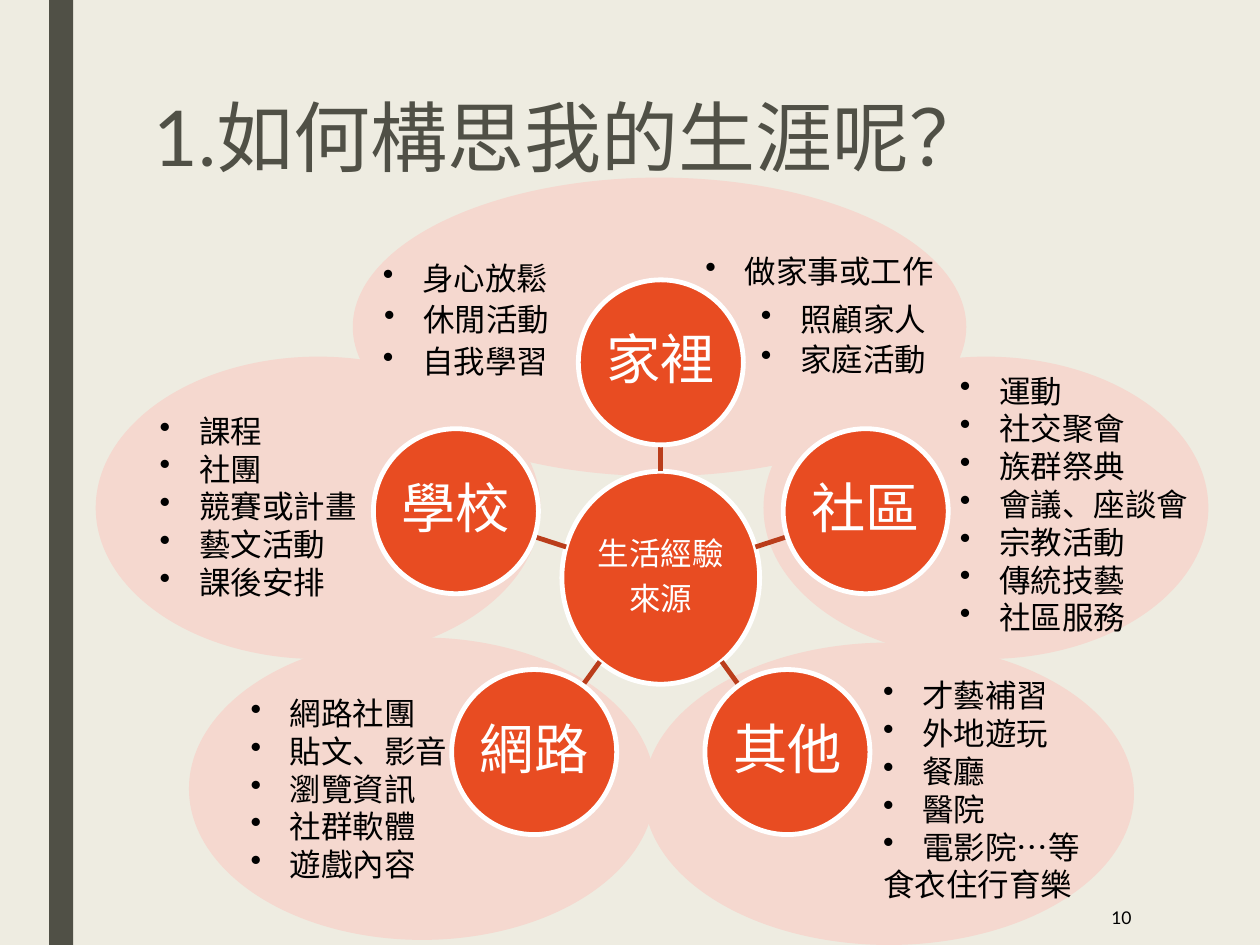
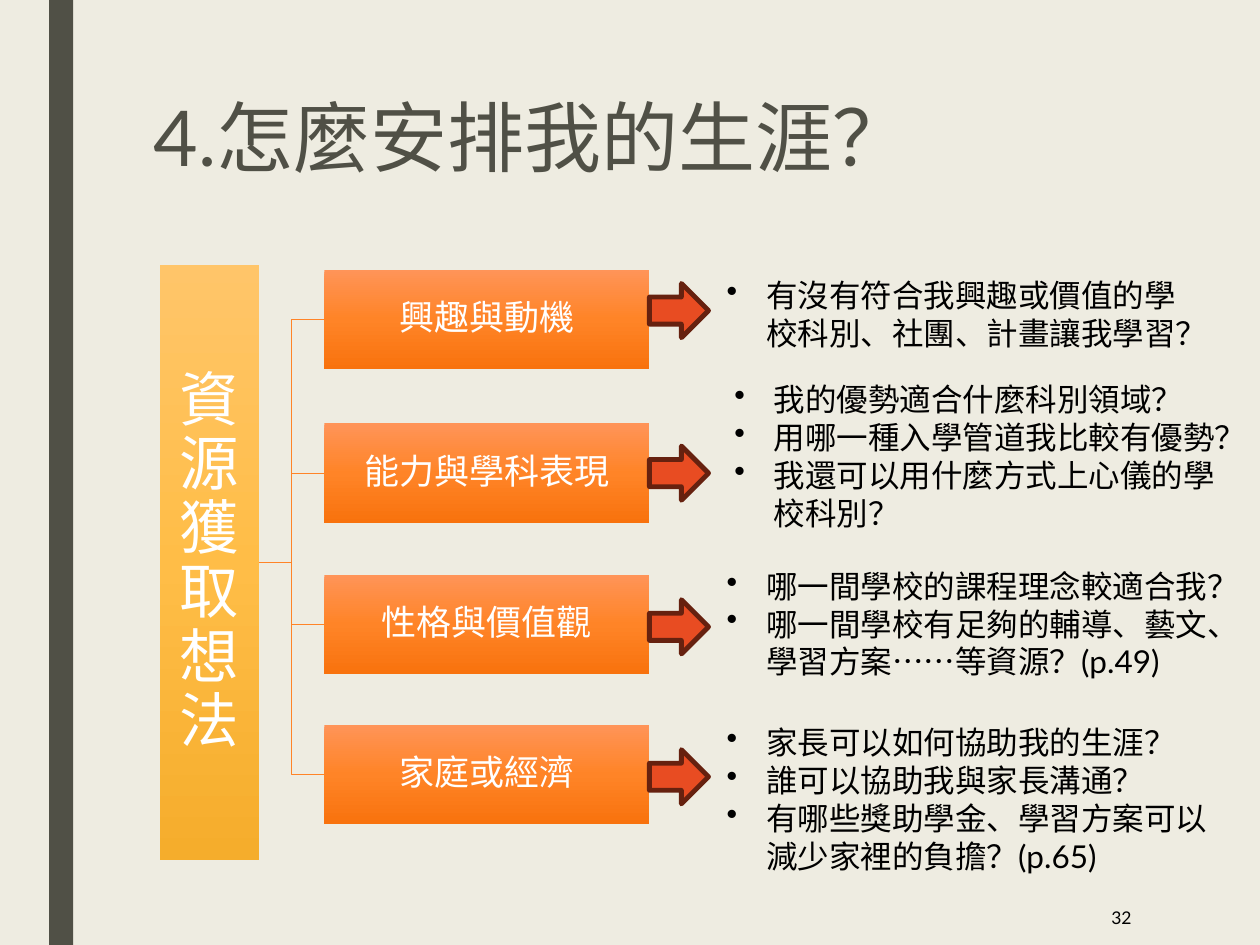
from math import cos, hypot, radians, sin

from lxml import etree
from pptx import Presentation
from pptx.dml.color import RGBColor
from pptx.enum.shapes import MSO_CONNECTOR, MSO_SHAPE
from pptx.enum.text import MSO_ANCHOR, MSO_AUTO_SIZE, PP_ALIGN
from pptx.oxml.ns import qn
from pptx.util import Pt

RECT, OVAL, ARROW = MSO_SHAPE.RECTANGLE, MSO_SHAPE.OVAL, MSO_SHAPE.RIGHT_ARROW
STRAIGHT, ELBOW = MSO_CONNECTOR.STRAIGHT, MSO_CONNECTOR.ELBOW
TOP, MIDDLE = MSO_ANCHOR.TOP, MSO_ANCHOR.MIDDLE
LEFT, CENTER, RIGHT = PP_ALIGN.LEFT, PP_ALIGN.CENTER, PP_ALIGN.RIGHT
NO_FIT = MSO_AUTO_SIZE.NONE

FONT = "Lato"
PAPER, OLIVE, WHITE, BLACK = "EEECE1", "505046", "FFFFFF", "000000"
PINK, RED, SPOKE, ARROW_EDGE = "F5D8CF", "E84C22", "BA3D1B", "66210F"
GOLD = ("FFC569", "FFBD47", "F5AD2C")
ORANGE = ("FF9458", "FF8427", "F8720D")

TITLE_BOX = (80.6, 54, 567.4, 116.6)
NUMBER_BOX = (559.4, 508.3, 94.3, 31.7)
BAR_BOX = (28.1, 0, 13.7, 540)
LIST_SIZE, LINE_HEIGHT, LIST_PAD, INDENT = 18, 21.6, 7.2, 22.5

PETALS = [
    ("家裡", (201.6, 101.5, 350.6, 170.6), [
        (10.1, 43.2, 121.7, ["身心放鬆"]),
        (10.8, 66.3, 165.6, ["休閒活動"]),
        (10.1, 90.7, 146.2, ["自我學習"]),
        (194.4, 38.9, 146.2, ["做家事或工作"]),
        (226.1, 66.3, 116, ["照顧家人"]),
        (226.1, 89.3, 146.2, ["家庭活動"])]),
    ("社區", (436.3, 203.8, 254.2, 172.8), [
        (105.1, 5, 179.3, ["運動", "社交聚會", "族群祭典", "會議、座談會",
                           "宗教活動", "傳統技藝", "社區服務"])]),
    ("其他", (367.9, 367.2, 280.1, 172.8), [
        (129.6, 15.8, 169.2, ["才藝補習", "外地遊玩", "餐廳", "醫院", "電影院…等"])]),
    ("網路", (108, 364.3, 266.4, 172.8), [
        (28.1, 28.8, 169.2, ["網路社團", "貼文、影音", "瀏覽資訊", "社群軟體", "遊戲內容"])]),
    ("學校", (54.7, 203.8, 254.2, 172.8), [
        (29.5, 28, 169.2, ["課程", "社團", "競賽或計畫", "藝文活動", "課後安排"])]),
]
OTHER_CLOSING = "食衣住行育樂"

BRANCHES = [
    ("興趣與動機", 2.6, 7.9, (222.9, 0, 273.6), 2,
     ["有沒有符合我興趣或價值的學校科別、社團、計畫讓我學習？"]),
    ("能力與學科表現", 90.4, 13, (227.2, -28.1, 289.4), 4,
     ["我的優勢適合什麼科別領域？", "用哪一種入學管道我比較有優勢？",
      "我還可以用什麼方式上心儀的學校科別？"]),
    ("性格與價值觀", 176.8, 14.4, (222.9, -7.9, 297.4), 3,
     ["哪一間學校的課程理念較適合我？",
      "哪一間學校有足夠的輔導、藝文、學習方案……等資源？(p.49)"]),
    ("家庭或經濟", 262.5, 14.4, (222.9, -4.3, 297.4), 4,
     ["家長可以如何協助我的生涯？", "誰可以協助我與家長溝通？",
      "有哪些獎助學金、學習方案可以減少家裡的負擔？(p.65)"]),
]


def rgb(value):
    """Turn a hex string into a colour."""
    return RGBColor.from_string(value)


def pts(box):
    """Turn numbers into point lengths."""
    return [Pt(v) for v in box]


def apply(obj, **values):
    """Set every given value as an attribute of the object."""
    for name, value in values.items():
        setattr(obj, name, value)


def gradient(sp, colours):
    """Fill a shape from top to bottom with evenly spaced colours."""
    sp.fill.gradient()
    stops = sp.fill._xPr.find(qn("a:gradFill")).find(qn("a:gsLst"))
    for old in list(stops):
        stops.remove(old)
    for i, colour in enumerate(colours):
        gs = etree.SubElement(stops, qn("a:gs"), pos=str(100000 * i // (len(colours) - 1)))
        etree.SubElement(gs, qn("a:srgbClr"), val=colour)
    sp.fill.gradient_angle = 270


def add_block(s, kind, box, fill, line=None):
    """Add a preset shape with a plain or graded fill and optional outline."""
    sp = s.shapes.add_shape(kind, *pts(box))
    sp.shadow.inherit = False
    if isinstance(fill, tuple):
        gradient(sp, fill)
    else:
        sp.fill.solid()
        sp.fill.fore_color.rgb = rgb(fill)
    if line:
        sp.line.color.rgb = rgb(line)
        sp.line.width = Pt(2.75)
    else:
        sp.line.fill.background()
    return sp


def add_line(s, kind, ends, colour, width):
    """Add a connector between two points."""
    cx = s.shapes.add_connector(kind, *pts(ends))
    cx.line.color.rgb = rgb(colour)
    cx.line.width = Pt(width)
    etree.SubElement(cx._element.spPr, qn("a:effectLst"))


def write(tf, lines, size, colour, **para):
    """Write one formatted paragraph for each line."""
    tf.word_wrap = True
    for i, text in enumerate(lines):
        p = tf.paragraphs[0] if i == 0 else tf.add_paragraph()
        apply(p, **para)
        r = p.add_run()
        r.text = text
        apply(r.font, name=FONT, size=Pt(size))
        r.font.color.rgb = rgb(colour)


def label(sp, lines, size):
    """Centre white text inside a shape."""
    tf = sp.text_frame
    apply(tf, vertical_anchor=MIDDLE, margin_left=Pt(1), margin_right=Pt(1),
          margin_top=Pt(1), margin_bottom=Pt(1))
    write(tf, lines, size, WHITE, alignment=CENTER, line_spacing=0.9,
          space_after=Pt(0.35 * size))


def bullet_list(s, left, top, width, items, lines=None, closing=None):
    """Add a bulleted list, with an optional closing line without bullet."""
    texts = items + ([closing] if closing else [])
    height = LINE_HEIGHT * (lines or len(texts)) + LIST_PAD
    tf = s.shapes.add_textbox(*pts((left, top, width, height))).text_frame
    write(tf, texts, LIST_SIZE, BLACK)
    for p in tf.paragraphs[:len(items)]:
        pPr = p._p.get_or_add_pPr()
        pPr.set("marL", str(Pt(INDENT)))
        pPr.set("indent", str(-Pt(INDENT)))
        etree.SubElement(pPr, qn("a:buChar"), char="•")


def petals(s, lists_only):
    """Draw the pale ovals, or the lists that lie on them."""
    for name, box, lists in PETALS:
        if not lists_only:
            add_block(s, OVAL, box, PINK)
            continue
        for dx, dy, width, items in lists:
            closing = OTHER_CLOSING if name == "其他" else None
            bullet_list(s, box[0] + dx, box[1] + dy, width, items, closing=closing)


def source_wheel(s, box, ring=123.1, disc=94.3):
    """Draw the hub in the box, and the named discs on a ring around it."""
    left, top, width, height = box
    cx, cy = left + width / 2, top + height / 2
    label(add_block(s, OVAL, box, RED, WHITE), ["生活經驗", "來源"], 18)
    for i, (name, _, _) in enumerate(PETALS):
        angle = radians(360 / len(PETALS) * i)
        ux, uy = sin(angle), -cos(angle)
        start = 1 / hypot(2 * ux / width, 2 * uy / height)
        end = ring - disc / 2
        add_line(s, STRAIGHT, (cx + start * ux, cy + start * uy,
                               cx + end * ux, cy + end * uy), SPOKE, 2.75)
        disc_box = (cx + ring * ux - disc / 2, cy + ring * uy - disc / 2, disc, disc)
        label(add_block(s, OVAL, disc_box, RED, WHITE), [name], 31)


def resource_tree(s, box, trunk=56.9, gap=37.2, branch=(185.8, 56.9)):
    """Draw the trunk, its branches and the questions each one leads to."""
    left, top, _, height = box
    x = left + trunk + gap
    for _, dy, _, _, _, _ in BRANCHES:
        add_line(s, ELBOW, (left + trunk, top + height / 2,
                            x, top + dy + branch[1] / 2), ORANGE[1], 0.5)
    label(add_block(s, RECT, (left, top, trunk, height), GOLD), ["資源獲取想法"], 34)
    for name, dy, arrow_dy, (list_dx, list_dy, width), lines, items in BRANCHES:
        y = top + dy
        label(add_block(s, RECT, (x, y, *branch), ORANGE), [name], 20)
        add_block(s, ARROW, (x + branch[0], y + arrow_dy, 33.8, 31), RED, ARROW_EDGE)
        bullet_list(s, x + list_dx, y + list_dy, width, items, lines)


def add_slide(prs, title, number):
    """Add a slide with its title and number."""
    s = prs.slides.add_slide(prs.slide_layouts[5])
    sp = s.shapes.title
    apply(sp, **dict(zip(("left", "top", "width", "height"), pts(TITLE_BOX))))
    apply(sp.text_frame, vertical_anchor=TOP, auto_size=NO_FIT)
    write(sp.text_frame, [title], 44, OLIVE, alignment=LEFT, line_spacing=0.89)
    tf = s.shapes.add_textbox(*pts(NUMBER_BOX)).text_frame
    tf.vertical_anchor = MIDDLE
    write(tf, [number], 10, BLACK, alignment=RIGHT)
    return s


def style_master(prs, s):
    """Give the master its paper colour and side bar."""
    master = prs.slide_master
    master.background.fill.solid()
    master.background.fill.fore_color.rgb = rgb(PAPER)
    bar = add_block(s, RECT, BAR_BOX, OLIVE)
    master.shapes._spTree.append(bar._element)


def main():
    """Build both slides and save them."""
    prs = Presentation()
    apply(prs, slide_width=Pt(720), slide_height=Pt(540))

    s = add_slide(prs, "1.如何構思我的生涯呢？", "10")
    style_master(prs, s)
    petals(s, lists_only=False)
    source_wheel(s, (321.1, 269.3, 113, 121.7))
    petals(s, lists_only=True)

    s = add_slide(prs, "4.怎麼安排我的生涯？", "32")
    resource_tree(s, (91.2, 151.5, 590, 339.8))

    prs.save("out.pptx")


if __name__ == "__main__":
    main()
